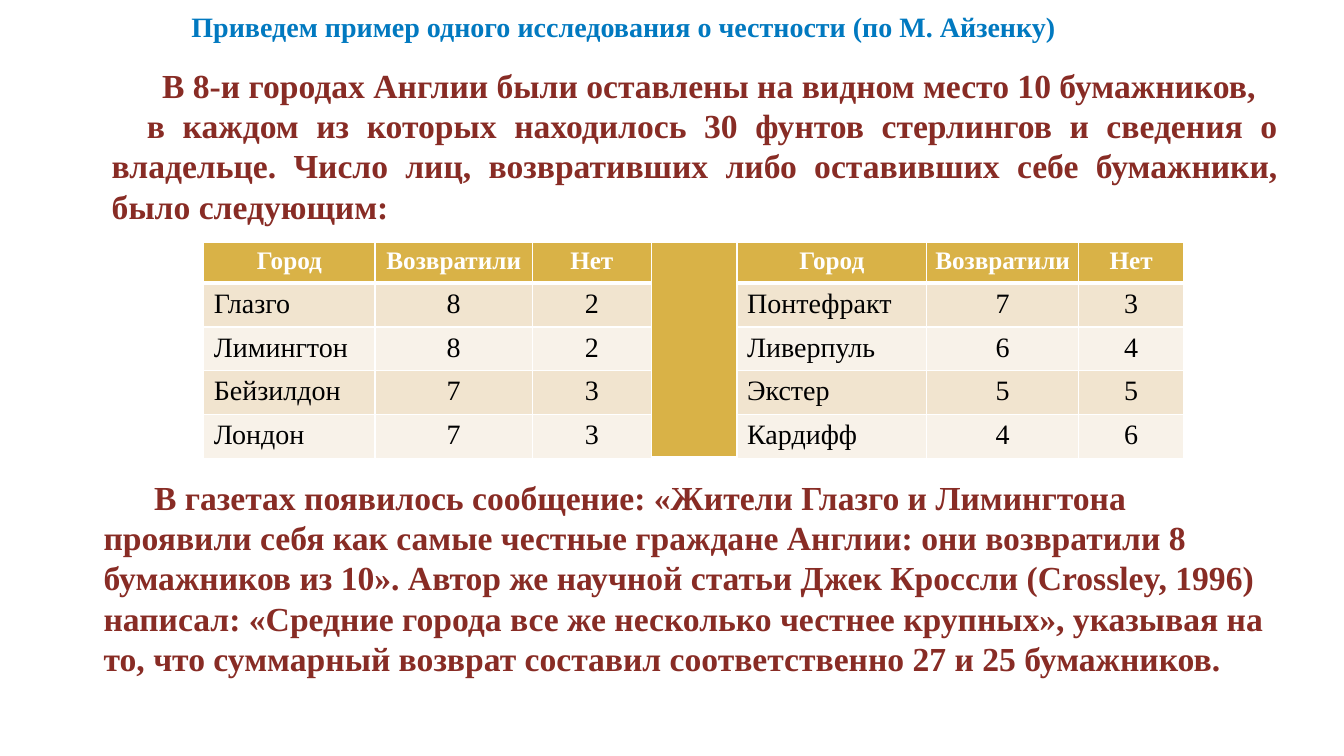
from lxml.etree import SubElement
from pptx import Presentation
from pptx.dml.color import RGBColor
from pptx.enum.text import MSO_AUTO_SIZE, PP_ALIGN
from pptx.oxml.ns import qn
from pptx.util import Inches, Pt

# Content
FONT = "Times New Roman"
BLUE, MAROON, GOLD, WHITE, BLACK = "0179C0", "882C25", "D9B247", "FFFFFF", "000000"
BANDS = ("F1E4CF", "F8F2E9")

TITLE = "Приведем пример одного исследования о честности (по М. Айзенку)"
# Each paragraph: text, alignment, first-line indent
INTRO = [
    ("В 8-и городах Англии были оставлены на видном место 10 бумажников,",
     PP_ALIGN.LEFT, 0.5),
    ("в каждом из которых находилось 30 фунтов стерлингов и сведения о владельце. "
     "Число лиц, возвративших либо оставивших себе бумажники, было следующим:",
     PP_ALIGN.JUSTIFY, 0.35),
]
CONCLUSION = [
    ("В газетах появилось сообщение: «Жители Глазго и Лимингтона проявили себя как "
     "самые честные граждане Англии: они возвратили 8 бумажников из 10». Автор же "
     "научной статьи Джек Кроссли (Crossley, 1996) написал: «Средние города все же "
     "несколько честнее крупных», указывая на то, что суммарный возврат составил "
     "соответственно 27 и 25 бумажников.", PP_ALIGN.LEFT, 0.5),
]
HEADINGS = ("Город", "Возвратили", "Нет")
LARGE_CITIES = [("Глазго", 8, 2), ("Лимингтон", 8, 2), ("Бейзилдон", 7, 3), ("Лондон", 7, 3)]
MEDIUM_CITIES = [("Понтефракт", 7, 3), ("Ливерпуль", 6, 4), ("Экстер", 5, 5), ("Кардифф", 4, 6)]
COLUMN_WIDTHS = (1.7, 1.56, 1.18, 0.85, 1.88, 1.51, 1.04)
ROW_HEIGHT = 0.41
HEADING_MARGIN = 0.04
DIVIDER = len(HEADINGS)


def color(value):
    return RGBColor.from_string(value)


def style(paragraph, size, tint, bold=True):
    for run in paragraph.runs:
        run.font.name = FONT
        run.font.size = Pt(size)
        run.font.bold = bold
        run.font.color.rgb = color(tint)


def add_text(slide, box, paragraphs, size, tint, wrap=True):
    frame = slide.shapes.add_textbox(*map(Inches, box)).text_frame
    frame.word_wrap = wrap
    frame.auto_size = MSO_AUTO_SIZE.SHAPE_TO_FIT_TEXT
    for index, (text, align, indent) in enumerate(paragraphs):
        paragraph = frame.add_paragraph() if index else frame.paragraphs[0]
        paragraph.text = text
        paragraph.alignment = align
        if indent:
            properties = paragraph._p.get_or_add_pPr()
            properties.set("marL", "0")
            properties.set("indent", str(Inches(indent)))
        style(paragraph, size, tint)


def add_borders(cell, row):
    widths = {"lnL": 1, "lnR": 1, "lnT": 3 if row == 1 else 1, "lnB": 3 if row == 0 else 1}
    for side, width in widths.items():
        line = SubElement(cell._tc.get_or_add_tcPr(), qn("a:" + side), w=str(Pt(width)))
        SubElement(SubElement(line, qn("a:solidFill")), qn("a:srgbClr"), val=WHITE)


def add_city_table(slide, left, top):
    rows = [(*HEADINGS, "", *HEADINGS)]
    rows += [(*large, "", *medium) for large, medium in zip(LARGE_CITIES, MEDIUM_CITIES)]
    table = slide.shapes.add_table(
        len(rows), len(COLUMN_WIDTHS), Inches(left), Inches(top),
        Inches(sum(COLUMN_WIDTHS)), Inches(ROW_HEIGHT * len(rows))).table
    for column, width in zip(table.columns, COLUMN_WIDTHS):
        column.width = Inches(width)
    for r, values in enumerate(rows):
        table.rows[r].height = Inches(ROW_HEIGHT)
        for c, value in enumerate(values):
            cell = table.cell(r, c)
            header = r == 0
            add_borders(cell, r)
            cell.fill.solid()
            cell.fill.fore_color.rgb = color(GOLD if header or c == DIVIDER else BANDS[(r - 1) % 2])
            # Narrow side margins keep each heading on one line
            if header:
                cell.margin_left = cell.margin_right = Inches(HEADING_MARGIN)
            cell.text_frame.text = str(value)
            paragraph = cell.text_frame.paragraphs[0]
            city = not header and c in (0, DIVIDER + 1)
            paragraph.alignment = PP_ALIGN.LEFT if city else PP_ALIGN.CENTER
            style(paragraph, 18 if header else 20, WHITE if header else BLACK, header)
    table.cell(0, DIVIDER).merge(table.cell(len(rows) - 1, DIVIDER))


def main():
    deck = Presentation()
    deck.slide_width, deck.slide_height = Inches(13.33), Inches(7.5)
    slide = deck.slides.add_slide(deck.slide_layouts[6])

    # Title and introduction
    add_text(slide, (1.8, 0.05, 8.85, 0.44), [(TITLE, PP_ALIGN.LEFT, 0)], 20, BLUE, wrap=False)
    add_text(slide, (1.01, 0.59, 11.76, 1.72), INTRO, 24, MAROON)

    # Wallet counts by city
    add_city_table(slide, 2.02, 2.4)

    # Conclusion
    add_text(slide, (0.93, 4.68, 11.7, 2.12), CONCLUSION, 24, MAROON)
    deck.save("out.pptx")


if __name__ == "__main__":
    main()
